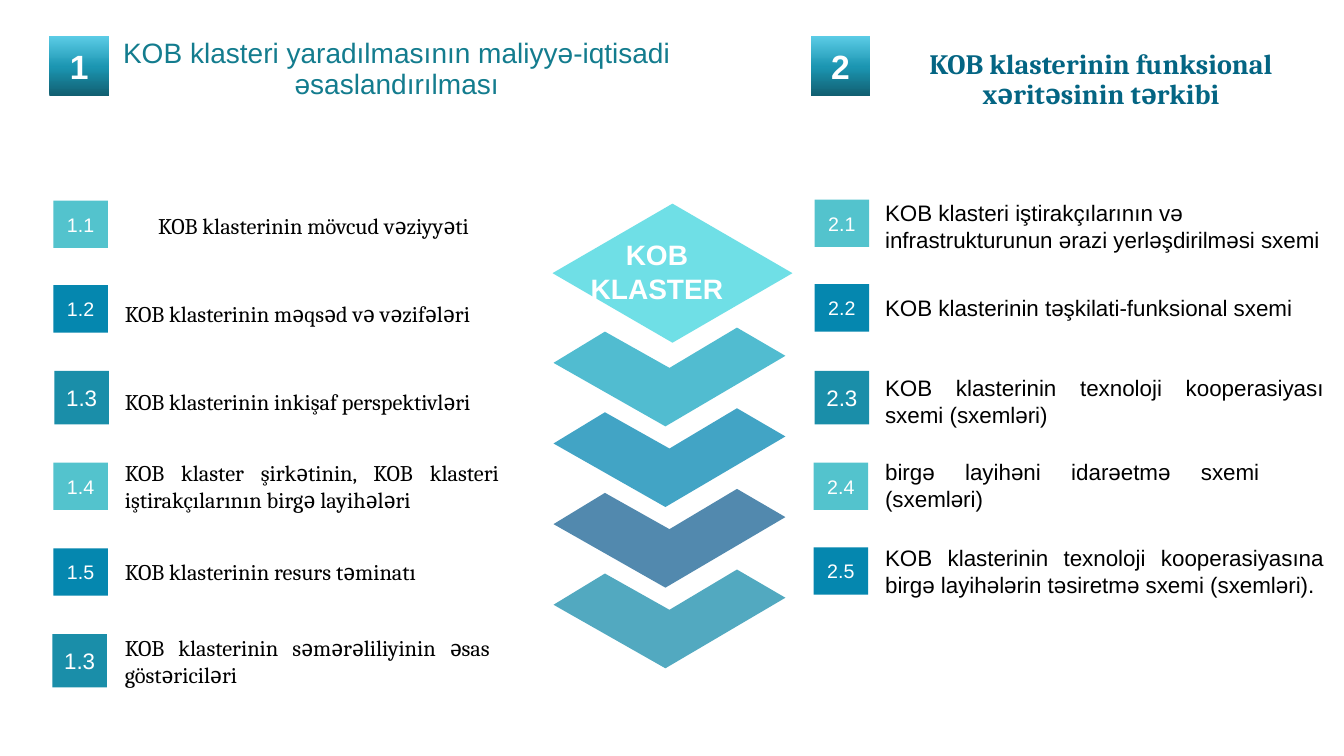
from copy import deepcopy
from dataclasses import dataclass

from pptx import Presentation
from pptx import util as u
from pptx.dml import color
from pptx.enum import shapes, text

Inches = u.Inches
ALIGN, ANCHOR = text.PP_ALIGN, text.MSO_ANCHOR


@dataclass(frozen=True)
class Theme:
    sans: str = "Arial"
    serif: str = "Cambria"
    white: str = "FFFFFF"
    black: str = "000000"
    left_title: str = "137C8E"
    right_title: str = "046583"
    diamond: str = "6FDFE6"
    chevrons: tuple = ("51BCD0", "42A4C5", "5289AE", "52A9C0")
    gradient: tuple = ((0, "115F71"), (0.48, "1B95B1"), (1, "5BCCE6"))
    badges: tuple = ("53C3CD", "0587AF", "1A8EA9")
    badge_heights: tuple = (0.47, 0.47, 0.53)
    badge_sizes: tuple = (14, 14, 16)
    body: int = 16
    title: int = 20
    number: int = 24


THEME = Theme()

# Badge left, badge top, label, text top, text width, lines, alignment, text
LEFT_ROWS = (
    (0.53, 1.99, "1.1", 2.06, 3.61, 1, ALIGN.RIGHT, "KOB klasterinin mövcud vəziyyəti"),
    (0.53, 2.83, "1.2", 2.93, 4.09, 1, ALIGN.JUSTIFY, "KOB klasterinin məqsəd və vəzifələri"),
    (0.54, 3.68, "1.3", 3.8, 4.09, 1, ALIGN.JUSTIFY, "KOB klasterinin inkişaf perspektivləri"),
    (0.53, 4.59, "1.4", 4.51, 3.91, 2, ALIGN.JUSTIFY,
     "KOB klaster şirkətinin, KOB klasteri iştirakçılarının birgə layihələri"),
    (0.53, 5.44, "1.5", 5.49, 3.91, 1, ALIGN.JUSTIFY, "KOB klasterinin resurs təminatı"),
    (0.52, 6.29, "1.3", 6.24, 3.82, 2, ALIGN.JUSTIFY,
     "KOB klasterinin səmərəliliyinin əsas göstəriciləri"),
)
RIGHT_ROWS = (
    (8.08, 1.98, "2.1", 1.93, 4.72, 2, ALIGN.LEFT,
     "KOB klasteri iştirakçılarının və infrastrukturunun ərazi yerləşdirilməsi sxemi"),
    (8.08, 2.82, "2.2", 2.87, 4.55, 1, ALIGN.JUSTIFY, "KOB klasterinin təşkilati-funksional sxemi"),
    (8.08, 3.68, "2.3", 3.66, 4.55, 2, ALIGN.JUSTIFY,
     "KOB klasterinin texnoloji kooperasiyası sxemi (sxemləri)"),
    (8.07, 4.59, "2.4", 4.5, 3.91, 2, ALIGN.JUSTIFY, "birgə layihəni idarəetmə sxemi (sxemləri)"),
    (8.07, 5.43, "2.5", 5.35, 4.55, 2, ALIGN.JUSTIFY,
     "KOB klasterinin texnoloji kooperasiyasına birgə layihələrin təsiretmə sxemi (sxemləri)."),
)
CHEVRON = ((5.49, 3.6), (6, 3.29), (6.64, 3.65), (7.31, 3.25), (7.79, 3.53), (6.6, 4.23))
CHEVRON_STEP = 0.8


def rgb(value):
    return color.RGBColor.from_string(value)


def apply(target, formats):
    for name, value in formats.items():
        setattr(target, name, value)


def write(shape, words, size, ink, font=THEME.sans, bold=False, align=ALIGN.CENTER,
          spacing=1.0, **frame_formats):
    frame = shape.text_frame
    apply(frame, {"word_wrap": True, **frame_formats})
    para = frame.paragraphs[0]
    apply(para, {"alignment": align, "line_spacing": spacing})
    span = para.add_run()
    span.text = words
    apply(span.font, {"name": font, "size": u.Pt(size), "bold": bold})
    span.font.color.rgb = rgb(ink)


def add_text(page, place, words, size, ink, **formats):
    box = page.shapes.add_textbox(*map(Inches, place))
    write(box, words, size, ink, **formats)


def paint(shape, fill):
    shape.shadow.inherit = False
    shape.line.fill.background()
    shape.fill.solid()
    shape.fill.fore_color.rgb = rgb(fill)


def add_preset(page, kind, place, fill):
    shape = page.shapes.add_shape(kind, *map(Inches, place))
    paint(shape, fill)
    return shape


def add_badge(page, left, top, label, style):
    place = (left, top, 0.54, THEME.badge_heights[style])
    badge = add_preset(page, shapes.MSO_SHAPE.RECTANGLE, place, THEME.badges[style])
    write(badge, label, THEME.badge_sizes[style], THEME.white,
          vertical_anchor=ANCHOR.MIDDLE, margin_left=0, margin_right=0)


def add_number(page, left, label):
    square = add_preset(page, shapes.MSO_SHAPE.RECTANGLE, (left, 0.36, 0.59, 0.59),
                        THEME.badges[0])
    fill = square.fill
    fill.gradient()
    fill.gradient_angle = 90
    last = fill.gradient_stops[1]._gs
    last.addprevious(deepcopy(last))
    for stop, (position, shade) in zip(fill.gradient_stops, THEME.gradient):
        stop.position = position
        stop.color.rgb = rgb(shade)
    write(square, label, THEME.number, THEME.white, bold=True,
          vertical_anchor=ANCHOR.MIDDLE, margin_left=0, margin_right=0)


def add_rows(page, rows, text_left, font):
    for index, (left, top, label, text_top, width, lines, align, words) in enumerate(rows):
        add_badge(page, left, top, label, index % len(THEME.badges))
        height = 0.37 if lines == 1 else 0.64
        add_text(page, (text_left, text_top, width, height), words, THEME.body,
                 THEME.black, font=font, align=align)


def add_chevron(page, drop, fill):
    points = [(Inches(x), Inches(y + drop)) for x, y in CHEVRON]
    builder = page.shapes.build_freeform(*points[0])
    builder.add_line_segments(points[1:], close=True)
    paint(builder.convert_to_shape(), fill)


def add_stack(page):
    for index, fill in enumerate(THEME.chevrons):
        add_chevron(page, index * CHEVRON_STEP, fill)
    add_preset(page, shapes.MSO_SHAPE.DIAMOND, (5.48, 2.02, 2.38, 1.38), THEME.diamond)
    add_text(page, (5.74, 2.31, 1.55, 0.77), "KOB KLASTER", THEME.title, THEME.white, bold=True)


def main():
    deck = Presentation()
    apply(deck, {"slide_width": Inches(13.33), "slide_height": Inches(7.5)})
    page = deck.slides.add_slide(deck.slide_layouts[6])

    # Headings
    add_text(page, (0.41, 0.23, 7.05, 0.93),
             "KOB klasteri yaradılmasının maliyyə-iqtisadi əsaslandırılması",
             THEME.title, THEME.left_title, spacing=0.9, vertical_anchor=ANCHOR.MIDDLE)
    add_text(page, (8.61, 0.4, 4.62, 0.79), "KOB klasterinin funksional xəritəsinin tərkibi",
             THEME.title, THEME.right_title, font=THEME.serif, bold=True, spacing=0.9,
             vertical_anchor=ANCHOR.MIDDLE)
    add_number(page, 0.49, "1")
    add_number(page, 8.04, "2")

    # Cluster stack
    add_stack(page)

    # Numbered columns
    add_rows(page, LEFT_ROWS, 1.14, THEME.serif)
    add_rows(page, RIGHT_ROWS, 8.68, THEME.sans)

    deck.save("out.pptx")


if __name__ == "__main__":
    main()
